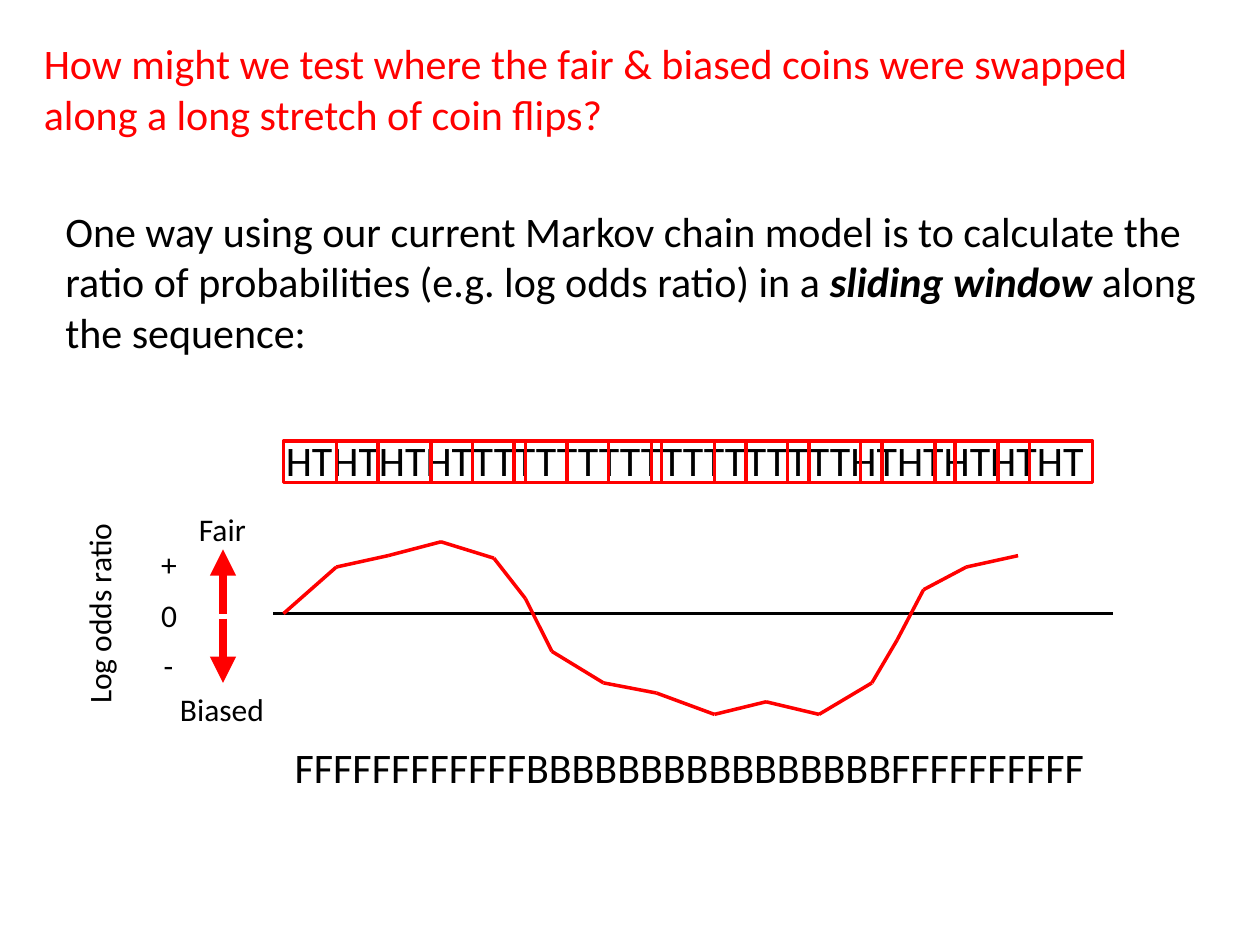
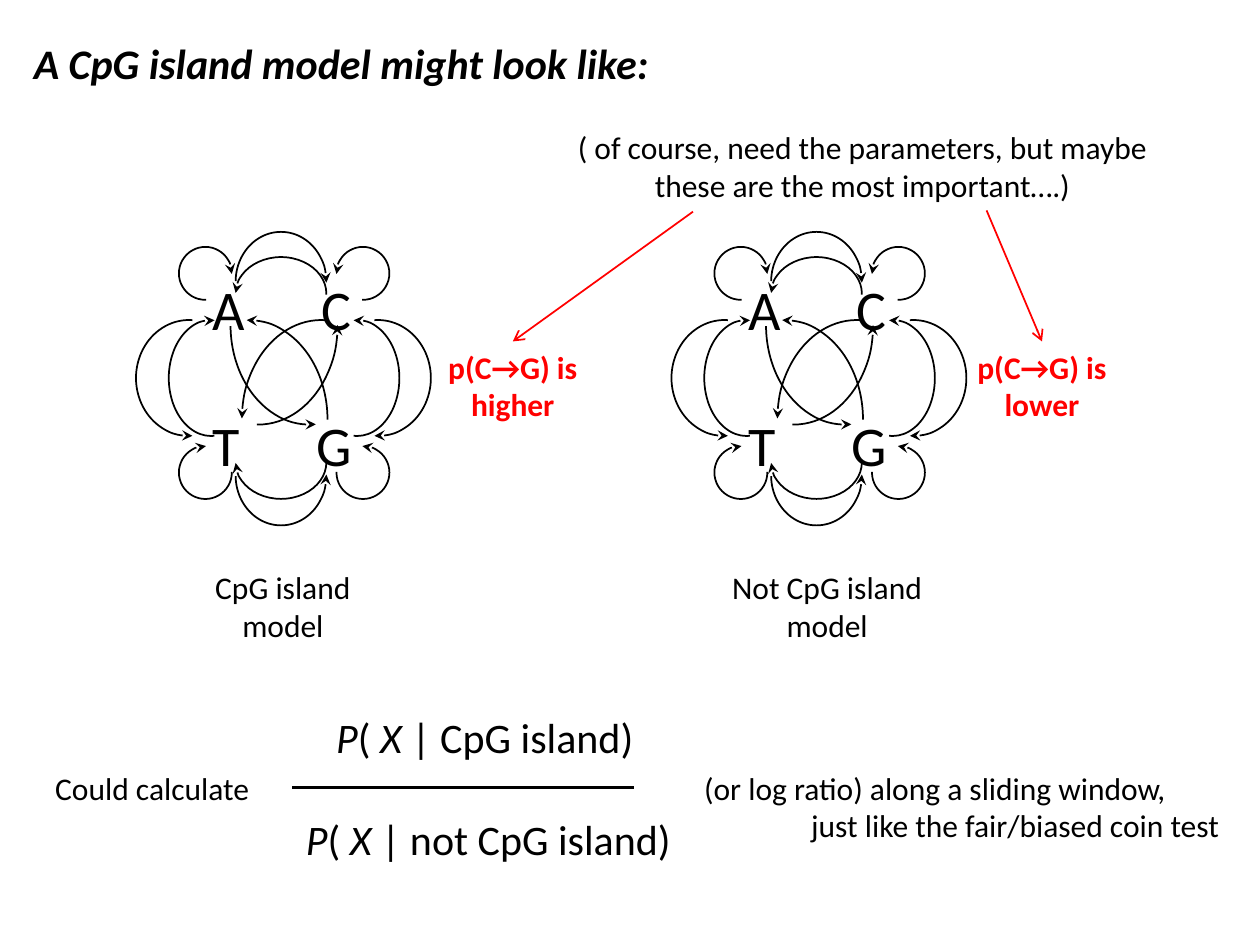
from dataclasses import dataclass

from lxml import etree
from pptx import Presentation
from pptx import util as u
from pptx.dml import color
from pptx.enum import shapes, text
from pptx.oxml import ns

COLORS = {"ink": "000000", "accent": "FF0000"}
FONT = "Calibri"
HEADING, LABEL, STATE = 24, 18, 32
CENTER = text.PP_ALIGN.CENTER

WINDOW_LEFTS = [2.25, 2.67, 3, 3.42, 4.08, 4.5, 5.17, 5.67, 6.25, 6.83, 7.42, 7.92]
LOG_ODDS_POINTS = [
    (2.25, 4.87), (2.67, 4.5), (3.08, 4.41), (3.5, 4.3), (3.92, 4.43), (4.17, 4.75),
    (4.38, 5.17), (4.79, 5.42), (5.21, 5.5), (5.67, 5.67), (6.08, 5.57), (6.5, 5.67),
    (6.92, 5.42), (7.12, 5.08), (7.33, 4.68), (7.67, 4.5), (8.08, 4.41),
]
AXIS_LABELS = [
    ("Fair", 1.48, 4, 0.58), ("Biased", 1.33, 5.43, 0.88),
    ("+", 1.18, 4.28, 0.33), ("0", 1.18, 4.68, 0.33), ("-", 1.2, 5.08, 0.28),
]

SWEEPS = {
    "bow": (180.78, 1.35),
    "side": (86.48, 273.4),
    "loop": (88.48, 1.27),
    "right": (269.16, 0),
    "left": (180.78, 273.4),
}
TRANSITIONS = [
    ("bow", (1.87, 1.84, 0.72, 0.79), "", 0, "tail"),
    ("bow", (1.87, 2.04, 0.72, 0.58), "", 0, "head"),
    ("bow", (1.87, 3.38, 0.72, 0.79), "V", 0, "tail"),
    ("bow", (1.87, 3.38, 0.72, 0.58), "V", 0, "head"),
    ("right", (1.34, 2.54, 1.26, 1.58), "", 0, "head"),
    ("left", (1.92, 2.54, 1.26, 1.58), "", 0, "head"),
    ("right", (1.42, 1.79, 1.26, 1.58), "V", 0, "tail"),
    ("left", (1.83, 1.79, 1.26, 1.58), "V", 0, "tail"),
    ("side", (1.34, 2.54, 0.67, 0.92), "V", 0, "head"),
    ("side", (1.08, 2.54, 0.84, 0.92), "V", 0, "tail"),
    ("side", (2.5, 2.54, 0.67, 0.92), "HV", 0, "head"),
    ("side", (2.58, 2.54, 0.84, 0.92), "HV", 0, "tail"),
    ("loop", (1.42, 1.96, 0.42, 0.42), "", 0, "tail"),
    ("loop", (1.42, 3.54, 0.42, 0.42), "", 270, "tail"),
    ("loop", (2.67, 1.96, 0.42, 0.42), "H", 0, "tail"),
    ("loop", (2.67, 3.54, 0.42, 0.42), "V", 270, "tail"),
]


@dataclass
class Line:
    """One paragraph: (words, style letters) runs, gap above in points, indent and tab in inches."""

    runs: list
    before: float = 0
    indent: float = 0
    tab: float = 0


def plain(words, style="", **layout):
    """Return a paragraph of a single run."""
    return Line([(words, style)], **layout)


def rgb(name):
    """Look up a named colour."""
    return color.RGBColor.from_string(COLORS[name])


def add_text(slide, box, lines, size=LABEL, ink="ink", wrap=True, align=None, rotation=0):
    """Add a text box holding the given paragraphs."""
    shape = slide.shapes.add_textbox(*map(u.Inches, box))
    shape.rotation = rotation
    frame = shape.text_frame
    frame.word_wrap = wrap
    frame.auto_size = text.MSO_AUTO_SIZE.SHAPE_TO_FIT_TEXT
    for index, line in enumerate(lines):
        paragraph = frame.add_paragraph() if index else frame.paragraphs[0]
        paragraph.alignment = align
        paragraph.space_before = u.Pt(line.before)
        properties = paragraph._p.get_or_add_pPr()
        if line.indent:
            properties.set("marL", str(u.Inches(line.indent)))
        if line.tab:
            stops = etree.SubElement(properties, ns.qn("a:tabLst"))
            etree.SubElement(stops, ns.qn("a:tab"), pos=str(u.Inches(line.tab)), algn="l")
        for words, style in line.runs:
            run = paragraph.add_run()
            run.text = words
            run.font.name = FONT
            run.font.size = u.Pt(size)
            run.font.bold = "b" in style
            run.font.italic = "i" in style
            run.font.color.rgb = rgb(ink)


def style_line(shape, ink, width, end="tail", arrow=None):
    """Colour an outline and put an optional arrowhead on one end."""
    shape.line.color.rgb = rgb(ink)
    shape.line.width = u.Pt(width)
    if arrow:
        outline = shape.line._get_or_add_ln()
        etree.SubElement(outline, ns.qn(f"a:{end}End"), type=arrow)


def add_line(slide, start, finish, ink="accent", width=2, arrow=None):
    """Add a straight line between two points."""
    connector = slide.shapes.add_connector(
        shapes.MSO_CONNECTOR.STRAIGHT, *map(u.Inches, (*start, *finish)))
    style_line(connector, ink, width, arrow=arrow)
    etree.SubElement(connector._element.spPr, ns.qn("a:effectLst"))


def add_outline(slide, kind, box):
    """Add an unfilled preset shape."""
    shape = slide.shapes.add_shape(kind, *map(u.Inches, box))
    shape.shadow.inherit = False
    shape.fill.background()
    return shape


def add_transition(slide, offset, sweep, box, flips, rotation, end):
    """Add one curved transition arrow, moved right by the offset."""
    left, *rest = box
    arc = add_outline(slide, shapes.MSO_SHAPE.ARC, (left + offset, *rest))
    for index, degrees in enumerate(SWEEPS[sweep]):
        arc.adjustments[index] = degrees * 0.6
    arc.rotation = rotation
    for axis in flips:
        arc._element.spPr.xfrm.set(f"flip{axis}", "1")
    style_line(arc, "ink", 1, end, "stealth")


def add_model(slide, offset):
    """Add the four nucleotide states and their transitions."""
    add_text(slide, (1.59 + offset, 2.13, 1.4, 1.72),
             [plain("A\tC", tab=0.86), plain("T\tG", before=39, tab=0.82)], STATE)
    for transition in TRANSITIONS:
        add_transition(slide, offset, *transition)


def build_coin_slide(slide):
    """Build the sliding window slide."""
    add_text(slide, (0.25, 0.25, 9.5, 0.91), [plain(
        "How might we test where the fair & biased coins were swapped "
        "along a long stretch of coin flips?")], HEADING, "accent")
    add_text(slide, (0.42, 1.58, 9.17, 1.31), [Line([
        ("One way using our current Markov chain model is to calculate the ratio of "
         "probabilities (e.g. log odds ratio) in a ", ""),
        ("sliding window ", "bi"), ("along the sequence:", "")])], HEADING)
    add_text(slide, (2.17, 3.4, 7, 2.93), [
        plain("HTHTHTHTTTTTTTTTTTTTTTTTTTHTHTHTHTHT"),
        plain("FFFFFFFFFFFFBBBBBBBBBBBBBBBBFFFFFFFFFF", before=146.5, indent=0.07)], HEADING)

    add_line(slide, (2.17, 4.87), (8.83, 4.87), "ink")
    for start, finish in zip(LOG_ODDS_POINTS, LOG_ODDS_POINTS[1:]):
        add_line(slide, start, finish)
    for left in WINDOW_LEFTS:
        window = add_outline(slide, shapes.MSO_SHAPE.RECTANGLE, (left, 3.5, 0.75, 0.33))
        style_line(window, "accent", 2)

    for start, finish in ((4.87, 4.36), (4.91, 5.42)):
        add_line(slide, (1.77, start), (1.77, finish), width=5, arrow="triangle")
    for label, left, top, width in AXIS_LABELS:
        add_text(slide, (left, top, width, 0.4), [plain(label)], wrap=False)
    add_text(slide, (-0.04, 4.66, 1.65, 0.4), [plain("Log odds ratio")],
             wrap=False, rotation=270)


def build_island_slide(slide):
    """Build the CpG island model slide."""
    add_text(slide, (0.17, 0.25, 9.58, 0.91),
             [plain("A CpG island model might look like:", "bi")], HEADING)
    models = [
        (0, "higher", 3.44, "CpG island", (1.6, 4.46, 1.29, 0.71)),
        (4.25, "lower", 7.64, "Not CpG island", (5.7, 4.46, 1.73, 0.71)),
    ]
    for offset, level, level_left, name, name_box in models:
        add_model(slide, offset)
        add_text(slide, (level_left, 2.71, 1.26, 0.71),
                 [plain("p(C→G) is", "b"), plain(level, "b")],
                 ink="accent", wrap=False, align=CENTER)
        add_text(slide, name_box, [plain(name), plain("model")], wrap=False, align=CENTER)

    add_text(slide, (4.44, 0.97, 4.81, 0.71), [plain(
        "( of course, need the parameters, but maybe these are the most important….)")],
        align=CENTER)
    add_line(slide, (5.5, 1.68), (4.07, 2.71), width=1, arrow="arrow")
    add_line(slide, (7.83, 1.67), (8.27, 2.71), width=1, arrow="arrow")

    odds = [("P", "i"), ("( ", ""), ("X ", "i")]
    add_text(slide, (0.33, 5.6, 9.42, 1.31), [
        Line([*odds, ("| CpG island)", "")], indent=2.24),
        Line([*odds, ("| not CpG island)", "")], before=29.3, indent=2)], HEADING)
    add_line(slide, (2.32, 6.25), (5.03, 6.25), "ink")
    add_text(slide, (0.34, 6.05, 9.6, 0.71), [
        plain("Could calculate\t(or log ratio) along a sliding window,", tab=5.15),
        plain("just like the fair/biased coin test", indent=6)])


def main():
    """Build and save the presentation."""
    presentation = Presentation()
    presentation.slide_width, presentation.slide_height = u.Inches(10), u.Inches(7.5)
    for build in (build_coin_slide, build_island_slide):
        build(presentation.slides.add_slide(presentation.slide_layouts[6]))
    presentation.save("out.pptx")


if __name__ == "__main__":
    main()
